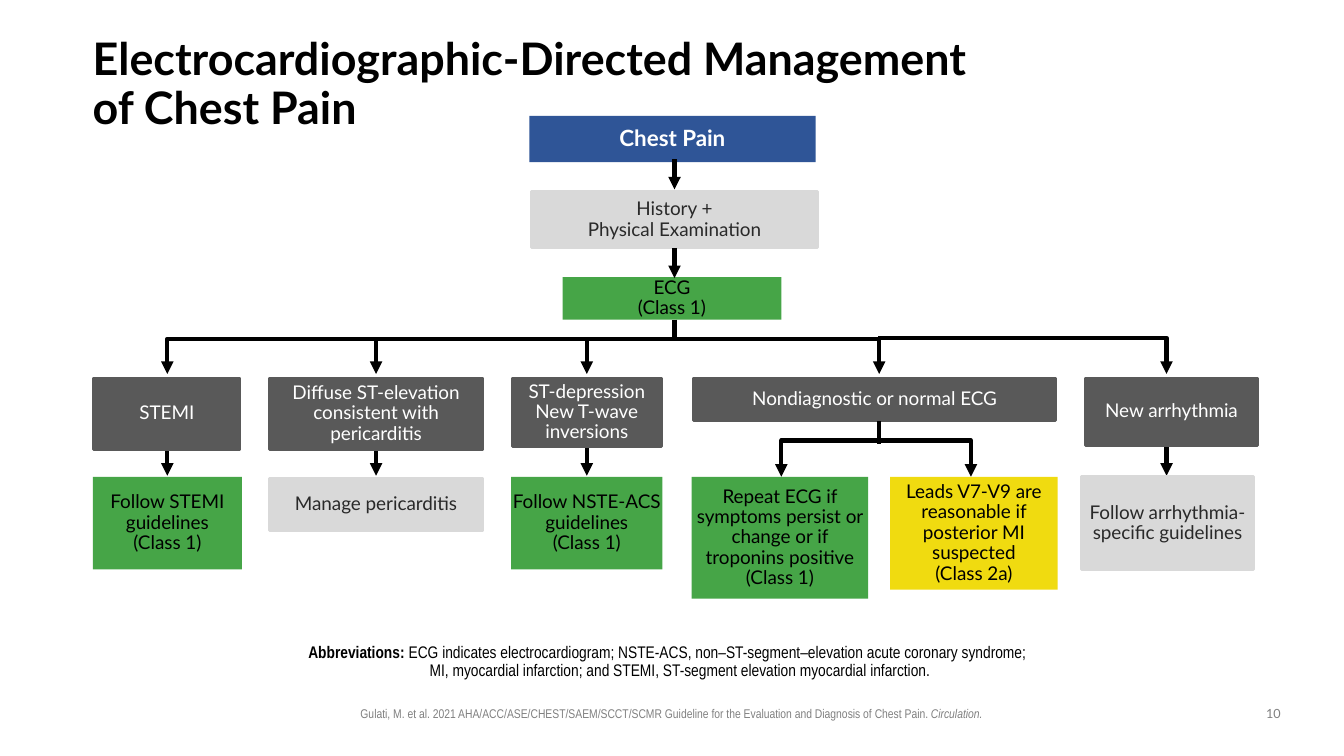
"""Build the chest pain ECG management flowchart slide."""
from dataclasses import dataclass
from typing import Any, NamedTuple

from lxml import etree
from pptx import Presentation
from pptx import util as u
from pptx.dml import color
from pptx.enum import shapes, text
from pptx.oxml import ns

PX = 9144


@dataclass(frozen=True)
class Theme:
    black: str = "000000"
    white: str = "FFFFFF"
    ink: str = "292929"
    muted: str = "808080"
    blue: str = "2F5597"
    green: str = "46A547"
    yellow: str = "F0DB10"
    pale: str = "D9D9D9"
    dark: str = "595959"
    sans: str = "Lato"
    narrow: str = "Arial Narrow"
    title: float = 32
    start: float = 16
    node: float = 13.5
    note: float = 12
    footer: float = 9
    arrow: float = 3
    outline: float = 2


THEME = Theme()


class Area(NamedTuple):
    left: int
    top: int
    width: int
    height: int


class Span(NamedTuple):
    words: str
    bold: bool = False
    italic: bool = False


class Style(NamedTuple):
    size: float
    ink: str
    font: str = THEME.sans
    align: Any = text.PP_ALIGN.CENTER
    spacing: float = 0.9


class Paint(NamedTuple):
    fill: str
    ink: str
    outlined: bool = False


class Node(NamedTuple):
    area: Area
    paint: Paint
    lines: tuple[str, ...]
    size: float = THEME.node
    bold: bool = False


class Caption(NamedTuple):
    area: Area
    style: Style
    spans: tuple[Span, ...]
    insets: tuple[int, int, int, int] = (10, 5, 10, 5)
    middle: bool = False
    hanging: int = 0


class Route(NamedTuple):
    points: tuple[tuple[int, int], ...]
    arrow: bool = True


START = Paint(THEME.blue, THEME.white)
STEP = Paint(THEME.pale, THEME.ink, True)
FINDING = Paint(THEME.dark, THEME.white, True)
CLASS_1 = Paint(THEME.green, THEME.black)
CLASS_2A = Paint(THEME.yellow, THEME.black)

FINDING_TOP, ACTION_TOP = 375, 473
TRUNK, BUS, BUS_TIP = 669, 336, 371
STEMI, PERICARDITIS, DEPRESSION, NORMAL, ARRHYTHMIA = 166, 373, 582, 872, 1157
FORK, FORK_TIP = 437, 473

NODES = (
    Node(Area(525, 115, 284, 46), START, ("Chest Pain",), THEME.start, True),
    Node(Area(527, 190, 284, 56), STEP, ("History +", "Physical Examination")),
    Node(Area(558, 275, 217, 42), CLASS_1, ("ECG", "(Class 1)")),
    Node(Area(93, FINDING_TOP, 145, 71), FINDING, ("STEMI",)),
    Node(Area(267, FINDING_TOP, 212, 71), FINDING,
         ("Diffuse ST-elevation consistent with pericarditis",)),
    Node(Area(508, FINDING_TOP, 148, 68), FINDING,
         ("ST-depression", "New T-wave inversions")),
    Node(Area(688, FINDING_TOP, 359, 42), FINDING, ("Nondiagnostic or normal ECG",)),
    Node(Area(1077, FINDING_TOP, 170, 67), FINDING, ("New arrhythmia",)),
    Node(Area(92, ACTION_TOP, 148, 92), CLASS_1, ("Follow STEMI guidelines", "(Class 1)")),
    Node(Area(267, 475, 212, 51), STEP, ("Manage pericarditis",)),
    Node(Area(1073, ACTION_TOP, 170, 92), STEP, ("Follow arrhythmia-specific guidelines",)),
    Node(Area(507, ACTION_TOP, 150, 92), CLASS_1,
         ("Follow NSTE-ACS guidelines", "(Class 1)")),
    Node(Area(686, ACTION_TOP, 175, 121), CLASS_1,
         ("Repeat ECG if symptoms persist or change or if troponins positive", "(Class 1)")),
    Node(Area(883, ACTION_TOP, 166, 112), CLASS_2A,
         ("Leads V7-V9 are reasonable if posterior MI suspected\n(Class 2a)",)),
)

ACTION_ARROWS = tuple(
    Route(((x, 442), (x, 472))) for x in (STEMI, PERICARDITIS, DEPRESSION, ARRHYTHMIA))
ROUTES = (
    Route(((TRUNK, 158), (TRUNK, 188))),
    Route(((TRUNK, 246), (TRUNK, 276))),
    Route(((TRUNK, 317), (TRUNK, 338)), False),
    Route(((NORMAL, 418), (NORMAL, 440)), False),
    *(Route(((TRUNK, BUS), (x, BUS), (x, BUS_TIP))) for x in (STEMI, NORMAL)),
    *(Route(((x, BUS), (x, BUS_TIP))) for x in (PERICARDITIS, DEPRESSION)),
    Route(((NORMAL - 1, BUS - 1), (ARRHYTHMIA, BUS - 1), (ARRHYTHMIA, BUS_TIP))),
    *(Route(((NORMAL, FORK), (x, FORK), (x, FORK_TIP))) for x in (775, 963)),
)

CAPTIONS = (
    Caption(Area(92, 40, 1150, 90), Style(THEME.title, THEME.black, align=text.PP_ALIGN.LEFT),
            (Span("Electrocardiographic-Directed Management\nof Chest Pain", bold=True),),
            (0, 0, 0, 0), middle=True),
    Caption(Area(92, 634, 1150, 30), Style(THEME.note, THEME.black, THEME.narrow),
            (Span("Abbreviations: ", bold=True),
             Span("ECG indicates electrocardiogram; NSTE-ACS, non–ST-segment–elevation acute "
                  "coronary syndrome;\nMI, myocardial infarction; and STEMI, ST-segment "
                  "elevation myocardial infarction.")),
            (0, 5, 10, 5), hanging=25),
    Caption(Area(317, 695, 698, 25), Style(THEME.footer, THEME.muted, THEME.narrow, spacing=1.0),
            (Span("Gulati, M. et al. 2021 AHA/ACC/ASE/CHEST/SAEM/SCCT/SCMR Guideline for the "
                  "Evaluation and Diagnosis of Chest Pain. "),
             Span("Circulation.", italic=True))),
    Caption(Area(1242, 695, 42, 26), Style(THEME.footer, THEME.muted, spacing=1.0),
            (Span("10"),)),
)


def rgb(value: str) -> color.RGBColor:
    """Turn a hex value into a colour."""
    return color.RGBColor.from_string(value)


def apply(target: Any, values: dict[str, Any]) -> None:
    """Set each format value on the target."""
    for name, value in values.items():
        setattr(target, name, value)


def prepare_frame(frame: Any, insets: tuple[int, int, int, int], middle: bool) -> None:
    """Set wrapping, anchor and insets of a text frame."""
    anchor = text.MSO_ANCHOR.MIDDLE if middle else text.MSO_ANCHOR.TOP
    sides = ("margin_left", "margin_top", "margin_right", "margin_bottom")
    margins = {side: inset * PX for side, inset in zip(sides, insets)}
    apply(frame, {"word_wrap": True, "vertical_anchor": anchor, **margins})


def write_para(para: Any, spans: tuple[Span, ...], style: Style) -> None:
    """Write styled spans, breaking lines at newlines."""
    apply(para, {"alignment": style.align, "line_spacing": style.spacing})
    for span in spans:
        for index, words in enumerate(span.words.split("\n")):
            if index:
                para.add_line_break()
            run = para.add_run()
            run.text = words
            apply(run.font, {"name": style.font, "size": u.Pt(style.size),
                             "bold": span.bold, "italic": span.italic})
            run.font.color.rgb = rgb(style.ink)


def draw_node(page: Any, node: Node) -> None:
    """Draw one filled flowchart box with its text."""
    box = page.shapes.add_shape(shapes.MSO_SHAPE.RECTANGLE, *(n * PX for n in node.area))
    box.shadow.inherit = False
    box.fill.solid()
    box.fill.fore_color.rgb = rgb(node.paint.fill)
    if node.paint.outlined:
        box.line.color.rgb = rgb(node.paint.fill)
        box.line.width = u.Pt(THEME.outline)
    else:
        box.line.fill.background()
    frame = box.text_frame
    prepare_frame(frame, (0, 0, 0, 0), True)
    for index, line in enumerate(node.lines):
        para = frame.add_paragraph() if index else frame.paragraphs[0]
        write_para(para, (Span(line, node.bold),), Style(node.size, node.paint.ink))


def draw_caption(page: Any, caption: Caption) -> None:
    """Draw one free text box."""
    frame = page.shapes.add_textbox(*(n * PX for n in caption.area)).text_frame
    prepare_frame(frame, caption.insets, caption.middle)
    para = frame.paragraphs[0]
    write_para(para, caption.spans, caption.style)
    if caption.hanging:
        properties = para._p.get_or_add_pPr()
        properties.set("marL", str(caption.hanging * PX))
        properties.set("indent", str(-caption.hanging * PX))


def draw_route(page: Any, route: Route) -> None:
    """Draw a straight or bent line, with an arrowhead at its end if wanted."""
    first, *rest = route.points
    if len(rest) == 1:
        ends = (n * PX for point in route.points for n in point)
        line = page.shapes.add_connector(shapes.MSO_CONNECTOR.STRAIGHT, *ends)
    else:
        builder = page.shapes.build_freeform(*first, scale=PX)
        builder.add_line_segments(rest, close=False)
        line = builder.convert_to_shape()
        line.fill.background()
    line.line.color.rgb = rgb(THEME.black)
    line.line.width = u.Pt(THEME.arrow)
    properties = line._element.spPr
    if route.arrow:
        etree.SubElement(properties.find(ns.qn("a:ln")), ns.qn("a:tailEnd"), type="triangle")
    etree.SubElement(properties, ns.qn("a:effectLst"))


def main() -> None:
    """Build and save the deck."""
    deck = Presentation()
    apply(deck, {"slide_width": 1333 * PX, "slide_height": 750 * PX})
    page = deck.slides.add_slide(deck.slide_layouts[6])
    for draw, items in ((draw_route, ACTION_ARROWS), (draw_caption, CAPTIONS),
                        (draw_node, NODES), (draw_route, ROUTES)):
        for item in items:
            draw(page, item)
    deck.save("out.pptx")


if __name__ == "__main__":
    main()
